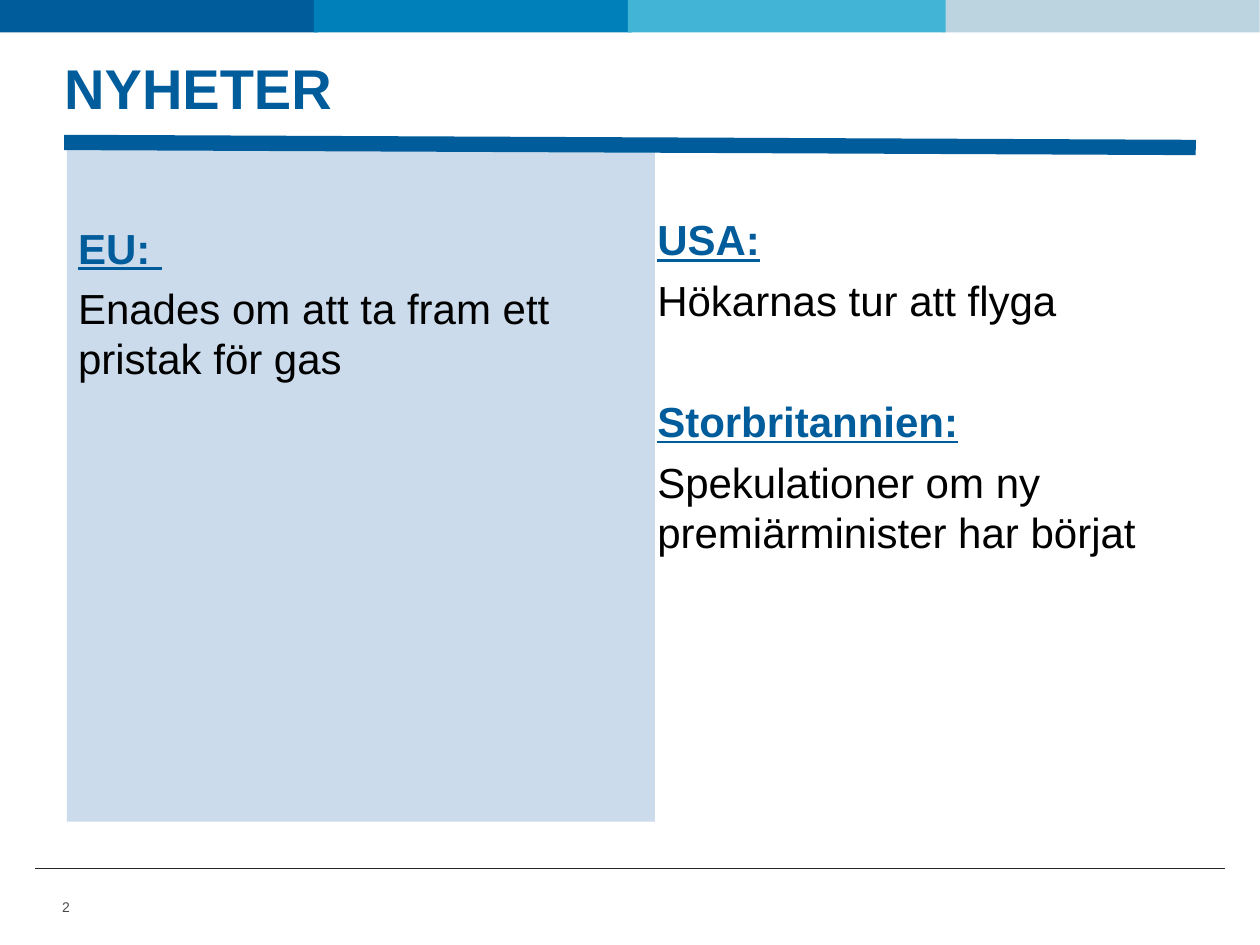
import pptx
import pptx.util
import pptx.dml.color
import pptx.enum.shapes
import pptx.enum.text
import pptx.oxml.ns
import lxml.etree

Pt = pptx.util.Pt
RGB = pptx.dml.color.RGBColor
ALIGN = pptx.enum.text.PP_ALIGN
ANCHOR = pptx.enum.text.MSO_ANCHOR

BLUE = RGB(0x00, 0x5C, 0x9B)
MID = RGB(0x00, 0x80, 0xBB)
SKY = RGB(0x42, 0xB5, 0xD7)
PALE = RGB(0xBC, 0xD4, 0xE0)
PANEL = RGB(0xCC, 0xDB, 0xEB)
BLACK = RGB(0, 0, 0)
DARK = RGB(0x26, 0x26, 0x26)
GREY = RGB(0x4A, 0x4A, 0x49)


def add_rect(slide, left, top, width, height, color):
    """Draw a plain filled rectangle."""
    kind = pptx.enum.shapes.MSO_SHAPE.RECTANGLE
    rect = slide.shapes.add_shape(kind, Pt(left), Pt(top), Pt(width), Pt(height))
    rect.shadow.inherit = False
    rect.fill.solid()
    rect.fill.fore_color.rgb = color
    rect.line.fill.background()


def add_line(slide, start, end, color, width):
    """Draw a straight line without a shadow."""
    kind = pptx.enum.shapes.MSO_CONNECTOR.STRAIGHT
    line = slide.shapes.add_connector(kind, *map(Pt, start + end))
    line.line.color.rgb = color
    line.line.width = Pt(width)
    lxml.etree.SubElement(line._element.spPr, pptx.oxml.ns.qn("a:effectLst"))


def set_font(para, size, color, bold=False, line=False):
    """Set the font of a whole paragraph."""
    font = para.font
    font.name = "Arial"
    font.size = Pt(size)
    font.color.rgb = color
    font.bold = bold
    font.underline = line


def set_frame(frame, left, top, right, bottom, anchor=ANCHOR.TOP):
    """Set the margins, wrapping and anchor of a text frame."""
    frame.margin_left, frame.margin_top = Pt(left), Pt(top)
    frame.margin_right, frame.margin_bottom = Pt(right), Pt(bottom)
    frame.word_wrap = True
    frame.auto_size = pptx.enum.text.MSO_AUTO_SIZE.NONE
    frame.vertical_anchor = anchor


def add_title(slide, text):
    """Place and format the slide title."""
    title = slide.shapes.title
    title.left, title.top = Pt(36.7), Pt(37.4)
    title.width, title.height = Pt(646.6), Pt(56.9)
    set_frame(title.text_frame, 0, 3.6, 7.2, 3.6)
    para = title.text_frame.paragraphs[0]
    para.text = text
    para.alignment = ALIGN.LEFT
    para.line_spacing = Pt(28)
    set_font(para, 32, BLUE, bold=True)


def add_news(slide, left, top, width, height, inset, items):
    """Write a column of underlined headings, each with its news."""
    box = slide.shapes.add_textbox(Pt(left), Pt(top), Pt(width), Pt(height))
    frame = box.text_frame
    set_frame(frame, 0, inset, 7.2, 3.6)
    for i, (head, news) in enumerate(items):
        para = frame.add_paragraph() if i else frame.paragraphs[0]
        para.text = head
        para.space_before = Pt(40.5 if i else 0)
        para.line_spacing = Pt(28.7)
        set_font(para, 24, BLUE, bold=True, line=True)
        para = frame.add_paragraph()
        para.text = news
        para.space_before = Pt(6)
        para.line_spacing = Pt(28.7)
        set_font(para, 24, BLACK)


def add_number(slide, text):
    """Write the slide number."""
    box = slide.shapes.add_textbox(Pt(23.8), Pt(507.6), Pt(28), Pt(20.9))
    set_frame(box.text_frame, 7.2, 3.6, 7.2, 3.6, ANCHOR.MIDDLE)
    para = box.text_frame.paragraphs[0]
    para.text = text
    para.alignment = ALIGN.CENTER
    set_font(para, 8, GREY)


def main():
    """Build the news slide."""
    deck = pptx.Presentation()
    deck.slide_width, deck.slide_height = Pt(720), Pt(540)
    slide = deck.slides.add_slide(deck.slide_layouts[5])
    for col, color in ((0, BLUE), (1, MID), (3, PALE), (2, SKY)):
        add_rect(slide, col * 179.4, 0, 181.6, 18.5, color)
    add_line(slide, (20, 496), (700, 496), DARK, 0.25)
    add_rect(slide, 38.2, 80.6, 336, 389, PANEL)
    add_news(slide, 375.6, 87.8, 314, 374.4, 34.6, [
        ("USA:", "Hökarnas tur att flyga"),
        ("Storbritannien:", "Spekulationer om ny premiärminister har börjat"),
    ])
    add_news(slide, 44.6, 87.8, 308.2, 393.8, 39.2, [
        ("EU: ", "Enades om att ta fram ett pristak för gas"),
    ])
    add_line(slide, (683.3, 84.3), (36.7, 81.4), BLUE, 8.75)
    add_title(slide, "NYHETER")
    add_number(slide, "2")
    deck.save("out.pptx")


if __name__ == "__main__":
    main()
